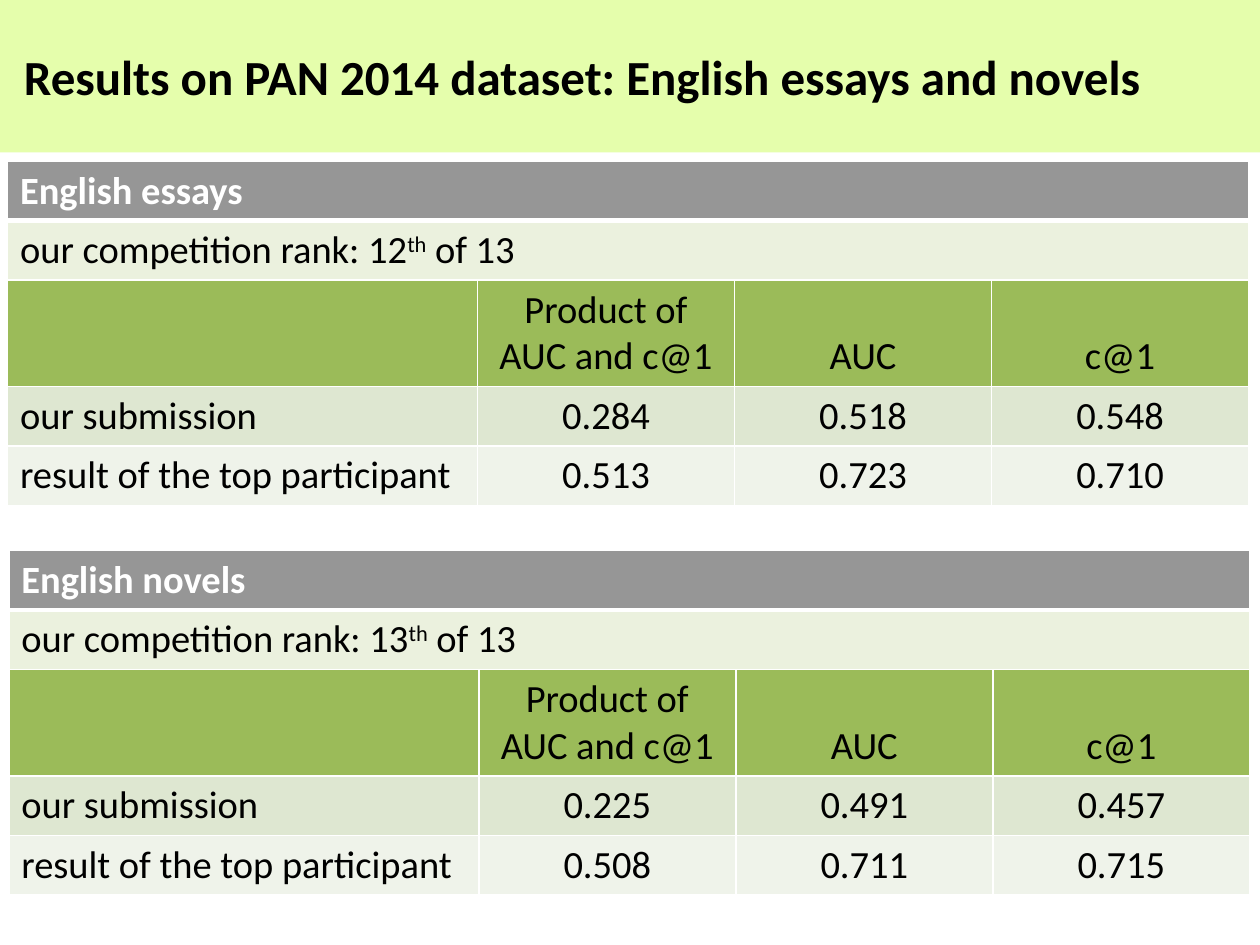
from pptx import Presentation
from pptx.dml.color import RGBColor as RGB
from pptx.enum.shapes import MSO_SHAPE as Shape
from pptx.enum.text import MSO_ANCHOR as Anchor, MSO_AUTO_SIZE as AutoSize, PP_ALIGN as Align
from pptx.oxml import parse_xml
from pptx.oxml.ns import nsdecls
from pptx.util import Inches, Pt

COLORS = {
    "band": "E5FEAC", "heading": "969696", "rank": "EBF1DE", "measures": "9BBB59",
    "ours": "DEE7D1", "top": "EFF3EA", "white": "FFFFFF", "black": "000000",
}
ROW_FILLS = ["heading", "rank", "measures", "ours", "top"]
COLUMN_WIDTHS = [3.73, 2.04, 2.04, 2.04]
ROW_HEIGHTS = [0.46, 0.46, 0.83, 0.46, 0.46]
MEASURES = ["", "Product of\nAUC and c@1", "AUC", "c@1"]
RESULTS = [
    ("English essays", "12", 0.06, 1.28, ["0.284", "0.518", "0.548"], ["0.513", "0.723", "0.710"]),
    ("English novels", "13", 0.07, 4.37, ["0.225", "0.491", "0.457"], ["0.508", "0.711", "0.715"]),
]


def style_font(font, size, color, bold=False):
    font.name, font.size, font.bold = "Calibri", Pt(size), bold
    font.color.rgb = RGB.from_string(COLORS[color])


def style_cell(cell, fill, bottom_width):
    properties = cell._tc.get_or_add_tcPr()
    for side, width in [("L", 1), ("R", 1), ("T", 1), ("B", bottom_width)]:
        properties.append(parse_xml(
            f'<a:ln{side} {nsdecls("a")} w="{Pt(width)}"><a:solidFill>'
            f'<a:srgbClr val="{COLORS["white"]}"/></a:solidFill></a:ln{side}>'))
    cell.fill.solid()
    cell.fill.fore_color.rgb = RGB.from_string(COLORS[fill])


deck = Presentation()
deck.slide_width, deck.slide_height = Inches(10), Inches(7.5)
slide = deck.slides.add_slide(deck.slide_layouts[5])

title = slide.shapes.title
title.left, title.top = 0, Inches(0.32)
title.width, title.height = deck.slide_width, Inches(0.57)
title.text_frame.text = "Results on PAN 2014 dataset: English essays and novels"
title.text_frame.auto_size = AutoSize.NONE
title.text_frame.margin_left = Inches(0.19)
title.text_frame.paragraphs[0].alignment = Align.LEFT
style_font(title.text_frame.paragraphs[0].font, 28, "black", True)

band = slide.shapes.add_shape(Shape.RECTANGLE, 0, 0, deck.slide_width, Inches(1.21))
band.shadow.inherit = False
band.fill.solid()
band.fill.fore_color.rgb = RGB.from_string(COLORS["band"])
band.line.fill.background()
title._element.addprevious(band._element)

for heading, rank, left, top, ours, best in RESULTS:
    table = slide.shapes.add_table(
        len(ROW_HEIGHTS), len(COLUMN_WIDTHS), Inches(left), Inches(top),
        Inches(sum(COLUMN_WIDTHS)), Inches(sum(ROW_HEIGHTS))).table
    for column, width in zip(table.columns, COLUMN_WIDTHS):
        column.width = Inches(width)
    for row, height in zip(table.rows, ROW_HEIGHTS):
        row.height = Inches(height)
    for row in range(2):
        table.cell(row, 0).merge(table.cell(row, 3))

    rows = [
        [heading, "", "", ""],
        [f"our competition rank: {rank}", "", "", ""],
        MEASURES,
        ["our submission", *ours],
        ["result of the top participant", *best],
    ]
    for row, (texts, fill) in enumerate(zip(rows, ROW_FILLS)):
        is_heading = fill == "heading"
        for column, text in enumerate(texts):
            cell = table.cell(row, column)
            style_cell(cell, fill, 3 if is_heading else 1)
            cell.text = text
            if fill == "measures":
                cell.vertical_anchor = Anchor.BOTTOM
            for paragraph in cell.text_frame.paragraphs:
                paragraph.alignment = Align.CENTER if column else Align.LEFT
                style_font(paragraph.font, 22, "white" if is_heading else "black", is_heading)

    rank_line = table.cell(1, 0).text_frame.paragraphs[0]
    ordinal = rank_line.add_run()
    ordinal.text = "th"
    ordinal._r.get_or_add_rPr().set("baseline", "30000")
    rank_line.add_run().text = " of 13"

deck.save("out.pptx")
